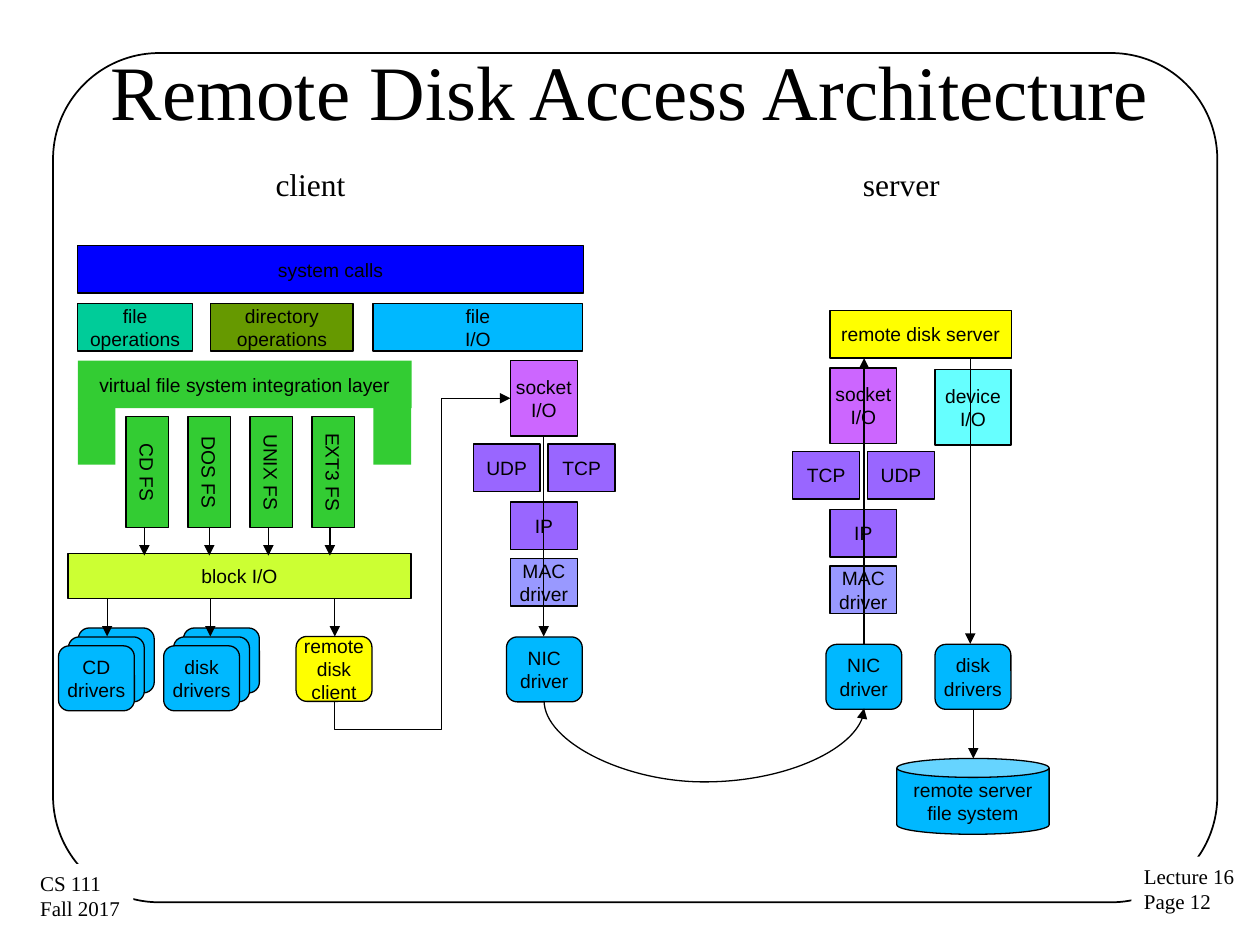
import dataclasses
import typing

import lxml.etree
import pptx
import pptx.dml.color
import pptx.enum.shapes
import pptx.enum.text
import pptx.oxml
import pptx.oxml.ns
import pptx.util

Cm = pptx.util.Cm
Shape = pptx.enum.shapes.MSO_SHAPE
Link = pptx.enum.shapes.MSO_CONNECTOR
Align = pptx.enum.text.PP_ALIGN
Anchor = pptx.enum.text.MSO_ANCHOR
Point = tuple[float, float]


@dataclasses.dataclass(frozen=True)
class Theme:
    ink: str = "000000"
    paper: str = "FFFFFF"
    calls: str = "0000FF"
    file_ops: str = "00CC99"
    dir_ops: str = "669900"
    driver: str = "00B8FF"
    vfs: str = "33CC33"
    block: str = "CCFF33"
    remote: str = "FFFF00"
    socket: str = "CC66FF"
    protocol: str = "9966FF"
    mac: str = "9999FF"
    device: str = "66FFFF"
    sans: str = "Arial"
    serif: str = "Times New Roman"
    title_size: float = 44
    heading_size: float = 18
    footer_size: float = 12
    label_size: float = 11
    line: float = 0.75
    frame_line: float = 1


T = Theme()


@dataclasses.dataclass(frozen=True)
class Box:
    x: float
    y: float
    w: float
    h: float
    fill: typing.Optional[str]
    text: str = ""
    kind: Shape = Shape.RECTANGLE
    line: float = T.line
    rotation: float = 0


@dataclasses.dataclass(frozen=True)
class Arrow:
    start: Point
    end: Point


def rgb(value: str) -> pptx.dml.color.RGBColor:
    return pptx.dml.color.RGBColor.from_string(value)


def write_text(sp, text: str, *, size: float = T.label_size, font: str = T.sans,
               align=Align.CENTER, anchor=Anchor.MIDDLE, wrap: bool = False,
               inset: float = 0.23) -> None:
    tf = sp.text_frame
    tf.word_wrap = wrap
    tf.vertical_anchor = anchor
    tf.margin_left = tf.margin_right = Cm(inset)
    tf.margin_top = tf.margin_bottom = Cm(0.13)
    for i, line in enumerate(text.split("\n")):
        p = tf.add_paragraph() if i else tf.paragraphs[0]
        p.alignment = align
        r = p.add_run()
        r.text = line
        r.font.size = pptx.util.Pt(size)
        r.font.name = font
        r.font.color.rgb = rgb(T.ink)


def draw_box(s, box: Box, **text_format):
    sp = s.shapes.add_shape(box.kind, Cm(box.x), Cm(box.y), Cm(box.w), Cm(box.h))
    sp.shadow.inherit = False
    sp.rotation = box.rotation
    if box.fill:
        sp.fill.solid()
        sp.fill.fore_color.rgb = rgb(box.fill)
    else:
        sp.fill.background()
    if box.line:
        sp.line.color.rgb = rgb(T.ink)
        sp.line.width = pptx.util.Pt(box.line)
    else:
        sp.line.fill.background()
    if box.text:
        write_text(sp, box.text, **text_format)
    return sp


def draw_text(s, x: float, y: float, w: float, h: float, text: str, **text_format) -> None:
    sp = s.shapes.add_textbox(Cm(x), Cm(y), Cm(w), Cm(h))
    write_text(sp, text, wrap=True, **text_format)


def draw_arrow(s, arrow: Arrow, kind=Link.STRAIGHT):
    cn = s.shapes.add_connector(kind, *(Cm(v) for v in arrow.start + arrow.end))
    cn.line.color.rgb = rgb(T.ink)
    cn.line.width = pptx.util.Pt(T.line)
    tail = lxml.etree.SubElement(cn.line._get_or_add_ln(), pptx.oxml.ns.qn("a:tailEnd"))
    tail.set("type", "triangle")
    lxml.etree.SubElement(cn._element.spPr, pptx.oxml.ns.qn("a:effectLst"))
    return cn


def draw_routed(s, arrow: Arrow, kind, preset: str, turn: int, adjusts: list[int]) -> None:
    (x1, y1), (x2, y2) = arrow.start, arrow.end
    mx, my = (x1 + x2) / 2, (y1 + y2) / 2
    sign = 1 if turn == 90 else -1
    dx, dy = sign * (y1 - my), sign * (mx - x1)
    cn = draw_arrow(s, Arrow((mx + dx, my + dy), (mx - dx, my - dy)), kind)
    pr = cn._element.spPr
    pr.find(pptx.oxml.ns.qn("a:xfrm")).set("rot", str(turn * 60000))
    geom = pr.find(pptx.oxml.ns.qn("a:prstGeom"))
    geom.set("prst", preset)
    guides = geom.find(pptx.oxml.ns.qn("a:avLst"))
    if guides is None:
        guides = lxml.etree.SubElement(geom, pptx.oxml.ns.qn("a:avLst"))
    for i, value in enumerate(adjusts, 1):
        gd = lxml.etree.SubElement(guides, pptx.oxml.ns.qn("a:gd"))
        gd.set("name", f"adj{i}")
        gd.set("fmla", f"val {value}")


def driver(x: float, y: float, text: str = "", fill: str = T.driver) -> Box:
    return Box(x, y, 1.53, 1.31, fill, text, Shape.ROUNDED_RECTANGLE)


def driver_pile(x: float, y: float, text: str) -> list[Box]:
    return [driver(x + 0.2 * i, y - 0.18 * i, "" if i else text) for i in (2, 1, 0)]


def protocol_stack(x: float, y: float, left: str, right: str) -> list[Box]:
    return [
        Box(x, y, 1.35, 1.52, T.socket, "socket\nI/O"),
        Box(x - 0.75, y + 1.68, 1.35, 0.96, T.protocol, left),
        Box(x + 0.76, y + 1.68, 1.35, 0.96, T.protocol, right),
        Box(x, y + 2.85, 1.35, 0.96, T.protocol, "IP"),
        Box(x, y + 3.99, 1.35, 0.96, T.mac, "MAC\ndriver"),
        driver(x - 0.08, y + 5.57, "NIC\ndriver"),
    ]


def main() -> None:
    prs = pptx.Presentation()
    prs.slide_width, prs.slide_height = Cm(25.4), Cm(19.05)
    s = prs.slides.add_slide(prs.slide_layouts[6])

    frame = draw_box(s, Box(1.07, 1.07, 23.47, 17.12, None, "",
                            Shape.ROUNDED_RECTANGLE, T.frame_line))
    frame.adjustments[0] = 0.125
    for footer in (Box(22.81, 17.27, 2.36, 1.3, T.paper, "Lecture 16\nPage 12", line=0),
                   Box(0.56, 17.42, 2.13, 1.3, T.paper, "CS 111\nFall 2017", line=0)):
        draw_box(s, footer, size=T.footer_size, font=T.serif, align=Align.LEFT,
                 anchor=Anchor.TOP, inset=0.25)
    draw_text(s, 0.99, 0.76, 23.42, 2.11, "Remote Disk Access Architecture",
              size=T.title_size, font=T.serif)
    for x, heading in ((3.86, "client"), (15.77, "server")):
        draw_text(s, x, 3.2, 4.8, 0.99, heading, size=T.heading_size,
                  font=T.serif, anchor=Anchor.TOP)

    file_systems = [Box(1.85 + 1.25 * i, 9.09, 2.24, 0.86, T.vfs, name + " FS", rotation=90)
                    for i, name in enumerate(("CD", "DOS", "UNIX", "EXT3"))]
    boxes = [
        Box(1.57, 4.95, 10.19, 0.96, T.calls, "system calls"),
        Box(1.57, 6.12, 2.31, 0.96, T.file_ops, "file\noperations"),
        Box(4.25, 6.12, 2.87, 0.96, T.dir_ops, "directory\noperations"),
        Box(7.52, 6.12, 4.23, 0.96, T.driver, "file\nI/O"),
        Box(1.57, 7.27, 6.73, 0.96, T.vfs, "virtual file system integration layer", line=0),
        Box(1.57, 8.23, 0.76, 1.14, T.vfs, line=0),
        Box(7.53, 8.23, 0.76, 1.14, T.vfs, line=0),
        *file_systems,
        Box(1.37, 11.16, 6.92, 0.91, T.block, "block I/O"),
        *driver_pile(1.18, 13.02, "CD\ndrivers"),
        *driver_pile(3.3, 13.02, "disk\ndrivers"),
        driver(5.97, 12.83, "remote\ndisk\nclient", T.remote),
        *protocol_stack(10.29, 7.27, "UDP", "TCP"),
        Box(16.73, 6.26, 3.66, 0.96, T.remote, "remote disk server"),
        *protocol_stack(16.73, 7.42, "TCP", "UDP"),
        Box(18.85, 7.45, 1.53, 1.52, T.device, "device\nI/O"),
        driver(18.85, 12.99, "disk\ndrivers"),
        Box(18.08, 15.29, 3.07, 1.53, T.driver, "remote server\nfile system", Shape.CAN),
    ]
    for box in boxes:
        draw_box(s, box)

    arrows = [Arrow((x, 10.64), (x, 11.2)) for x in (2.91, 4.22, 5.41, 6.65)]
    arrows += [Arrow((x, 12.07), (x, 12.83)) for x in (2.16, 4.24, 6.75)]
    arrows += [
        Arrow((10.96, 8.79), (10.96, 12.83)),
        Arrow((17.42, 12.98), (17.42, 7.22)),
        Arrow((19.56, 7.22), (19.56, 12.98)),
        Arrow((19.62, 14.3), (19.62, 15.29)),
    ]
    for arrow in arrows:
        draw_arrow(s, arrow)
    draw_routed(s, Arrow((6.75, 14.13), (10.29, 8.03)), Link.ELBOW,
                "bentConnector4", 90, [-9400, 60900])
    draw_routed(s, Arrow((10.97, 14.13), (17.42, 14.28)), Link.CURVE,
                "curvedConnector3", 270, [1089200])
    prs.save("out.pptx")


if __name__ == "__main__":
    main()
